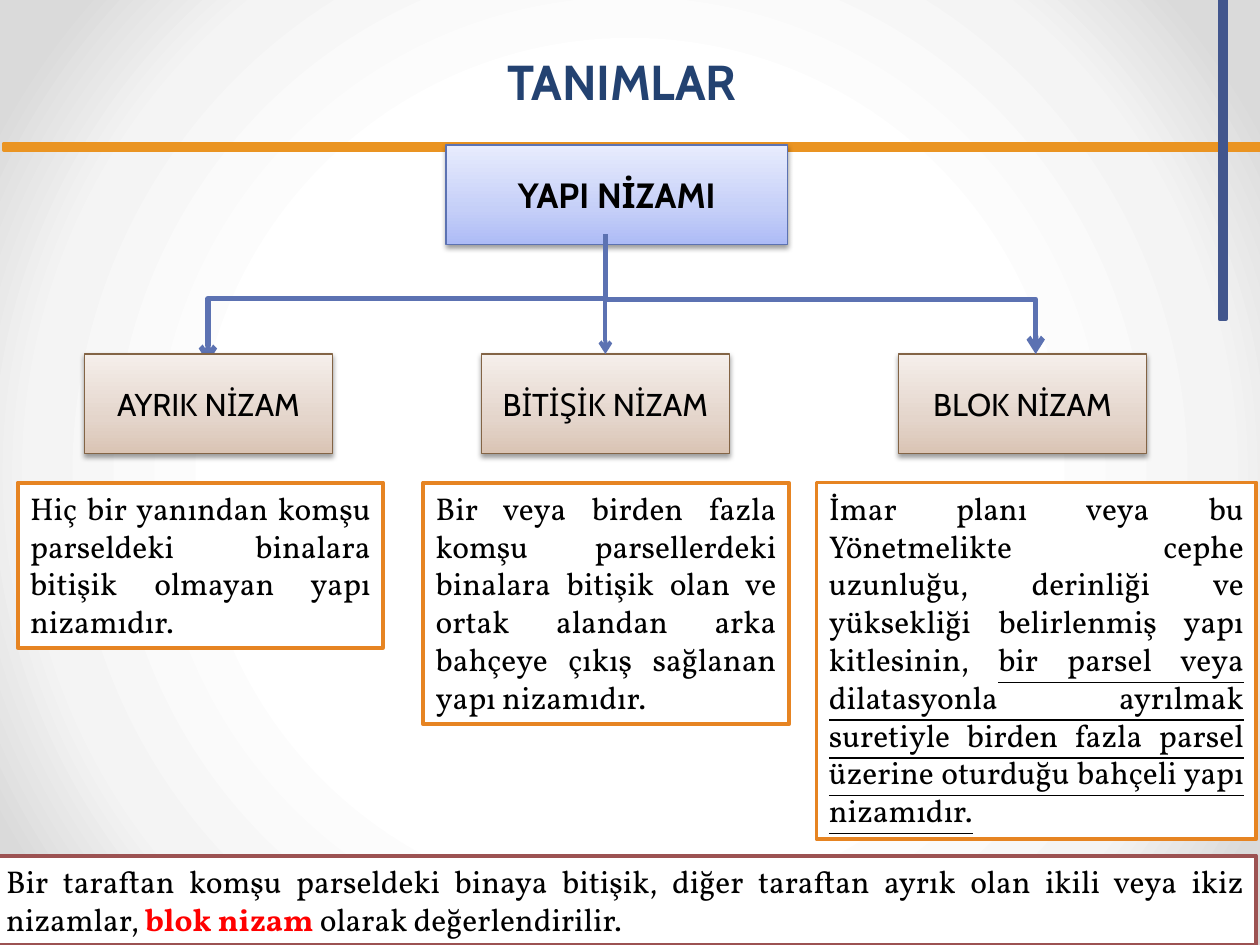
"""Build the building-order definitions slide."""
from lxml import etree
from pptx import Presentation
from pptx.dml.color import RGBColor
from pptx.enum.shapes import MSO_CONNECTOR, MSO_SHAPE
from pptx.enum.text import MSO_ANCHOR, MSO_AUTO_SIZE, PP_ALIGN
from pptx.oxml.ns import qn
from pptx.util import Inches, Pt

RECTANGLE = MSO_SHAPE.RECTANGLE
STRAIGHT, ELBOW = MSO_CONNECTOR.STRAIGHT, MSO_CONNECTOR.ELBOW
TOP, MIDDLE = MSO_ANCHOR.TOP, MSO_ANCHOR.MIDDLE
CENTER, JUSTIFY = PP_ALIGN.CENTER, PP_ALIGN.JUSTIFY
GROW = MSO_AUTO_SIZE.SHAPE_TO_FIT_TEXT
TOP_SITE = 0

BACKDROP = [(50, "FFFFFF"), (76, "F4F4F4"), (92, "DADADA")]
BLUE = [(0, "ADBBF6"), (35, "C5CFF8"), (100, "E8ECFD")]
BROWN = [(0, "DAC4B4"), (35, "E4D5CB"), (100, "F5EFEB")]
BLUE_LINE, BROWN_LINE, ORANGE_LINE, RED_LINE = "5C72B2", "836445", "E68422", "9C5252"

NODE_TOP, NODE_WIDTH, NODE_HEIGHT = 2.81, 1.97, 0.79
NODES = [("AYRIK NİZAM", 0.67), ("BİTİŞİK NİZAM", 3.82), ("BLOK NİZAM", 7.13)]
TRUNK = NODES[1][1] + NODE_WIDTH / 2
BRANCH_Y = 2.37
NOTE_TOP = 3.83
NOTES = [
    (0.14, 2.9, 1.31, [
        ("Hiç bir yanından komşu parseldeki binalara bitişik olmayan yapı nizamıdır.", {})]),
    (3.36, 2.9, 1.92, [
        ("Bir veya birden fazla komşu parsellerdeki binalara bitişik olan ve ortak "
         "alandan arka bahçeye çıkış sağlanan yapı nizamıdır.", {})]),
    (6.48, 3.49, 2.83, [
        ("İmar planı veya bu Yönetmelikte cephe uzunluğu, derinliği ve yüksekliği "
         "belirlenmiş yapı kitlesinin, ", {}),
        ("bir parsel veya dilatasyonla ayrılmak suretiyle birden fazla parsel üzerine "
         "oturduğu bahçeli yapı nizamıdır.", {"underline": True})]),
]
SUMMARY = [
    ("Bir taraftan komşu parseldeki binaya bitişik, diğer taraftan ayrık olan ikili "
     "veya ikiz nizamlar, ", {}),
    ("blok nizam ", {"color": "FF0000", "bold": True}),
    ("olarak değerlendirilir.", {}),
]


def rgb(value):
    return RGBColor.from_string(value)


def add_node(parent, tag, **values):
    return etree.SubElement(parent, qn(tag), {key: str(value) for key, value in values.items()})


class SlideBuilder:
    """Hold the style and the current slide."""
    heading_font, body_font = "Cabin", "Vollkorn"

    def __init__(self, page):
        self.page = page

    def gradient(self, fill, owner, stops, radial=False):
        fill.gradient()
        gradient = next(owner.iter(qn("a:gradFill")))
        gradient.clear()
        stop_list = add_node(gradient, "a:gsLst")
        for position, color in stops:
            stop = add_node(stop_list, "a:gs", pos=position * 1000)
            add_node(stop, "a:srgbClr", val=color)
        if radial:
            shade = add_node(gradient, "a:path", path="circle")
            add_node(shade, "a:fillToRect", l=50000, t=50000, r=50000, b=50000)
        else:
            add_node(gradient, "a:lin", ang=270 * 60000, scaled=0)

    def outline(self, line, color, width):
        line.color.rgb = rgb(color)
        line.width = Pt(width)

    def add_text(self, shape, spans, align, anchor, **style):
        frame = shape.text_frame
        frame.vertical_anchor = anchor
        para = frame.paragraphs[0]
        para.alignment = align
        for text, changes in spans:
            span = para.add_run()
            span.text = text
            values = {"color": "000000", **style, **changes}
            span.font.color.rgb = rgb(values.pop("color"))
            for name, value in values.items():
                setattr(span.font, name, value)

    def title(self, text, *place):
        shape = self.page.shapes.title
        for name, value in zip(("left", "top", "width", "height"), place):
            setattr(shape, name, Inches(value))
        shape.text_frame.word_wrap = False
        shape.text_frame.auto_size = GROW
        self.add_text(shape, [(text, {})], CENTER, TOP, size=Pt(28),
                      name=self.heading_font, bold=True, color="234271")

    def bar(self, color, *place):
        shape = self.page.shapes.add_shape(RECTANGLE, *map(Inches, place))
        shape.shadow.inherit = False
        shape.fill.solid()
        shape.fill.fore_color.rgb = rgb(color)
        self.outline(shape.line, color, 2.25)

    def node(self, text, place, stops, line_color, size, bold=False):
        shape = self.page.shapes.add_shape(RECTANGLE, *map(Inches, place))
        self.gradient(shape.fill, shape.element, stops)
        self.outline(shape.line, line_color, 0.75)
        shape.shadow.inherit = False
        shadow = add_node(next(shape.element.iter(qn("a:effectLst"))), "a:outerShdw",
                          blurRad=Pt(3.1), dist=Pt(1.6), dir=90 * 60000, rotWithShape=0)
        add_node(add_node(shadow, "a:srgbClr", val="000000"), "a:alpha", val=38000)
        self.add_text(shape, [(text, {})], CENTER, MIDDLE, size=Pt(size),
                      name=self.heading_font, bold=bold)
        return shape

    def note(self, spans, line_color, *place):
        shape = self.page.shapes.add_textbox(*map(Inches, place))
        shape.fill.solid()
        shape.fill.fore_color.rgb = rgb("FFFFFF")
        self.outline(shape.line, line_color, 2.25)
        shape.text_frame.word_wrap = True
        shape.text_frame.auto_size = GROW
        self.add_text(shape, spans, JUSTIFY, TOP, size=Pt(18), name=self.body_font)

    def arrow(self, kind, start, end, width):
        connector = self.page.shapes.add_connector(kind, *map(Inches, start + end))
        self.outline(connector.line, BLUE_LINE, width)
        properties = connector.element.spPr
        add_node(properties.find(qn("a:ln")), "a:tailEnd", type="arrow")
        add_node(properties, "a:effectLst")
        return connector

    def elbow(self, start, end):
        """Draw an elbow that leaves and arrives vertically."""
        (x1, y1), (x2, y2) = start, end
        across, down = abs(x2 - x1), y2 - y1
        left, top = (x1 + x2 - down) / 2, (y1 + y2 - across) / 2
        connector = self.arrow(ELBOW, (left, top), (left + down, top + across), 3)
        frame = connector.element.spPr.find(qn("a:xfrm"))
        if x2 > x1:
            frame.set("flipH", "1")
        frame.set("rot", str((270 if x2 > x1 else 90) * 60000))


def main():
    deck = Presentation()
    deck.slide_width, deck.slide_height = Inches(10), Inches(7.5)
    page = deck.slides.add_slide(deck.slide_layouts[5])
    builder = SlideBuilder(page)
    builder.gradient(page.background.fill, page.element, BACKDROP, radial=True)
    builder.bar("EA9422", 0.03, 1.14, 9.97, 0.05)
    builder.bar("42568D", 9.68, 0, 0.05, 2.53)
    builder.title("TANIMLAR", 3.77, 0.36, 2.33, 0.57)
    builder.node("YAPI NİZAMI", (3.54, 1.15, 2.71, 0.79), BLUE, BLUE_LINE, 20, bold=True)
    builder.elbow((TRUNK, 1.86), (1.65, 2.88))
    boxes = [builder.node(text, (left, NODE_TOP, NODE_WIDTH, NODE_HEIGHT), BROWN, BROWN_LINE, 18)
             for text, left in NODES]
    builder.elbow((TRUNK, 1.94), (8.22, NODE_TOP))
    stem = builder.arrow(STRAIGHT, (TRUNK, BRANCH_Y), (TRUNK, NODE_TOP), 2.25)
    stem.end_connect(boxes[1], TOP_SITE)
    for left, width, height, spans in NOTES:
        builder.note(spans, ORANGE_LINE, left, NOTE_TOP, width, height)
    builder.note(SUMMARY, RED_LINE, -0.05, 6.79, 10.02, 0.71)
    deck.save("out.pptx")


if __name__ == "__main__":
    main()
